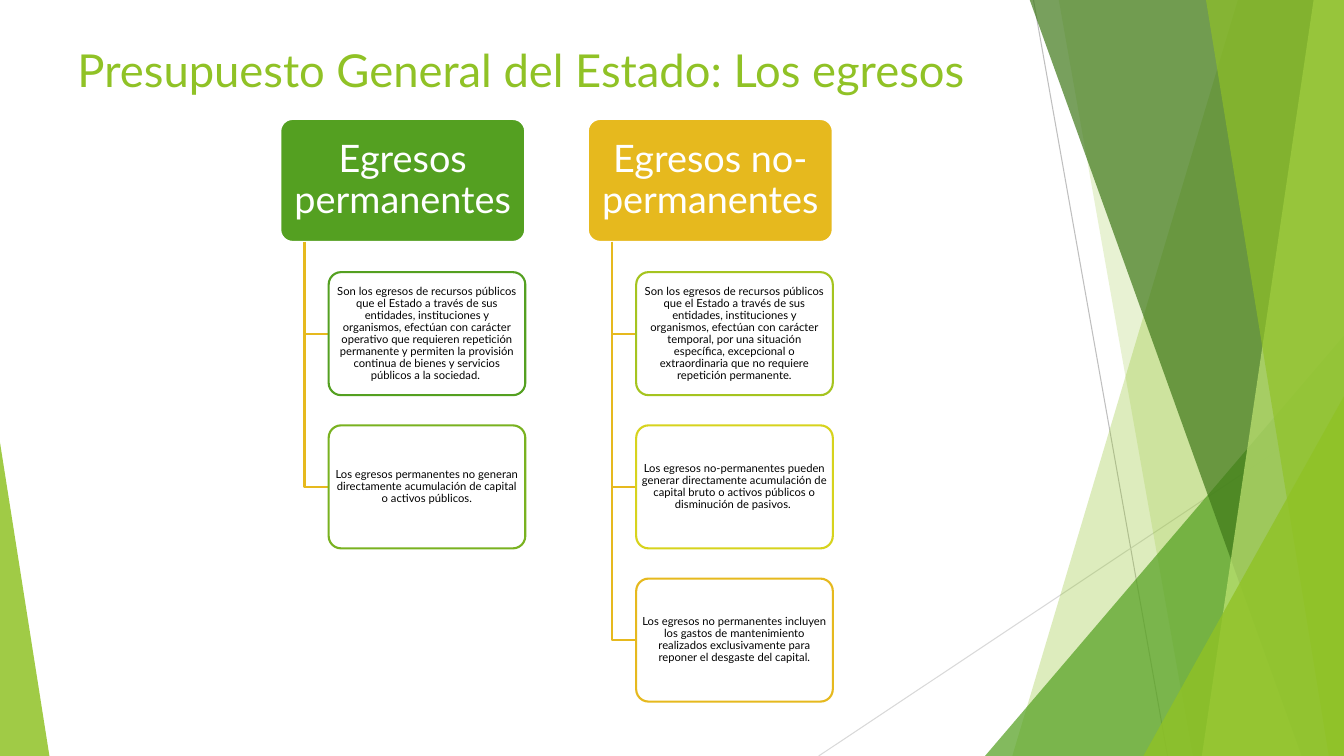
"""Build the slide on permanent and non-permanent state expenditure."""
from lxml.etree import SubElement
from pptx import Presentation
from pptx.dml.color import RGBColor
from pptx.enum.shapes import MSO_CONNECTOR, MSO_SHAPE
from pptx.enum.text import MSO_ANCHOR, PP_ALIGN
from pptx.oxml.ns import qn
from pptx.util import Inches, Pt

FONT = "Lato"
WHITE = RGBColor(0xFF, 0xFF, 0xFF)
BLACK = RGBColor(0x00, 0x00, 0x00)
LIME = RGBColor(0x90, 0xC2, 0x26)
PALE_LIME = RGBColor(0xC0, 0xE4, 0x74)
GREEN = RGBColor(0x54, 0xA0, 0x21)
DARK_GREEN = RGBColor(0x3F, 0x78, 0x19)
LEAF = RGBColor(0x79, 0xB2, 0x20)
OLIVE = RGBColor(0xA5, 0xC4, 0x1F)
YELLOW = RGBColor(0xD7, 0xD3, 0x1D)
GOLD = RGBColor(0xE6, 0xB9, 0x1E)
GREY = RGBColor(0xBF, 0xBF, 0xBF)
LIGHT_GREY = RGBColor(0xD9, 0xD9, 0xD9)

WIDTH, HEIGHT = 13.33, 7.5
HEADER_TOP, HEADER_WIDTH, BOX_HEIGHT = 1.18, 2.43, 1.22
DETAIL_WIDTH, DETAIL_INDENT, TRUNK_INDENT = 1.95, 0.48, 0.24
ROW_PITCH = 1.52

COLUMNS = [
    (2.78, "Egresos permanentes", GREEN, [
        ("Son los egresos de recursos públicos que el Estado a través de sus "
         "entidades, instituciones y organismos, efectúan con carácter operativo "
         "que requieren repetición permanente y permiten la provisión continua "
         "de bienes y servicios públicos a la sociedad. ", GREEN),
        ("Los egresos permanentes no generan directamente acumulación de capital "
         "o activos públicos.", LEAF),
    ]),
    (5.83, "Egresos no-permanentes ", GOLD, [
        ("Son los egresos de recursos públicos que el Estado a través de sus "
         "entidades, instituciones y organismos, efectúan con carácter temporal, "
         "por una situación específica, excepcional o extraordinaria que no "
         "requiere repetición permanente.", OLIVE),
        ("Los egresos no-permanentes pueden generar directamente acumulación de "
         "capital bruto o activos públicos o disminución de pasivos. ", YELLOW),
        ("Los egresos no permanentes incluyen los gastos de mantenimiento "
         "realizados exclusivamente para reponer el desgaste del capital.", GOLD),
    ]),
]


def paint(shape, color, opacity=100):
    """Give a shape a solid fill of the given opacity and no shadow."""
    shape.shadow.inherit = False
    shape.fill.solid()
    shape.fill.fore_color.rgb = color
    if opacity < 100:
        node = next(shape._element.spPr.iter(qn("a:srgbClr")))
        SubElement(node, qn("a:alpha")).set("val", str(opacity * 1000))


def outline(shape, color, width=1.5):
    """Set the colour and width of a line."""
    shape.line.color.rgb = color
    shape.line.width = Pt(width)


def add_path(page, points, closed):
    """Draw a freeform through points given in inches."""
    start, *others = [(Inches(x), Inches(y)) for x, y in points]
    builder = page.shapes.build_freeform(*start)
    builder.add_line_segments(others, close=closed)
    return builder.convert_to_shape()


def add_facet(page, top_left, top_right, bottom_left, color, opacity):
    """Draw a translucent facet reaching the right edge of the slide."""
    points = [(top_left, -0.01), (top_right, -0.01), (WIDTH, HEIGHT), (bottom_left, HEIGHT)]
    if top_right < WIDTH:
        points.insert(2, (WIDTH, -0.01))
    facet = add_path(page, points, True)
    paint(facet, color, opacity)
    facet.line.fill.background()


def add_triangle(page, left, top, width, apex, color, opacity):
    """Draw a translucent triangle standing on the bottom edge."""
    triangle = page.shapes.add_shape(
        MSO_SHAPE.ISOSCELES_TRIANGLE, Inches(left), Inches(top),
        Inches(width), Inches(HEIGHT - top))
    triangle.adjustments[0] = apex
    paint(triangle, color, opacity)
    triangle.line.fill.background()


def add_hairline(page, start, end, color):
    """Draw a thin straight line."""
    line = page.shapes.add_connector(
        MSO_CONNECTOR.STRAIGHT, *[Inches(value) for value in (*start, *end)])
    outline(line, color, 0.75)
    SubElement(line._element.spPr, qn("a:effectLst"))


def add_background(page):
    """Draw the decoration from back to front."""
    add_hairline(page, (10.25, 0), (11.58, HEIGHT), GREY)
    add_hairline(page, (WIDTH, 4.03), (8.12, HEIGHT), LIGHT_GREY)
    add_facet(page, 12.28, WIDTH, 10.04, LIME, 30)
    add_facet(page, 10.5, WIDTH, 11.83, LIME, 20)
    add_triangle(page, 9.77, 3.33, 3.56, 1, GREEN, 72)
    add_facet(page, 10.21, WIDTH, 12.91, DARK_GREEN, 70)
    add_facet(page, 13.03, WIDTH, 11.92, PALE_LIME, 70)
    add_facet(page, 11.96, WIDTH, 13.18, LIME, 65)
    add_triangle(page, 11.34, 3.93, 1.99, 1, LIME, 80)
    add_triangle(page, 0, 4.39, 0.49, 0, LIME, 85)


def write(para, text, size, color):
    """Add one run to a paragraph."""
    span = para.add_run()
    span.text = text
    span.font.name = FONT
    span.font.size = Pt(size)
    span.font.color.rgb = color


def add_title(page, text):
    """Add the slide title."""
    box = page.shapes.add_textbox(Inches(0.67), Inches(0.37), Inches(9.85), Inches(1.18))
    box.text_frame.word_wrap = True
    write(box.text_frame.paragraphs[0], text, 32.4, LIME)


def add_box(page, left, top, width, text, size, color, inset):
    """Add a rounded box with centred text."""
    box = page.shapes.add_shape(
        MSO_SHAPE.ROUNDED_RECTANGLE, Inches(left), Inches(top),
        Inches(width), Inches(BOX_HEIGHT))
    box.adjustments[0] = 0.1
    frame = box.text_frame
    frame.word_wrap = True
    frame.vertical_anchor = MSO_ANCHOR.MIDDLE
    frame.margin_left = frame.margin_right = Inches(inset)
    frame.margin_top = frame.margin_bottom = Inches(0.01)
    para = frame.paragraphs[0]
    para.alignment = PP_ALIGN.CENTER
    para.line_spacing = 0.9
    write(para, text, size, color)
    return box


def add_column(page, left, heading, color, details):
    """Add a heading with its branch of detail boxes."""
    header = add_box(page, left, HEADER_TOP, HEADER_WIDTH, heading, 27, WHITE, 0.06)
    paint(header, color)
    outline(header, WHITE)
    trunk, detail_left = left + TRUNK_INDENT, left + DETAIL_INDENT
    for row, (text, border) in enumerate(details, 1):
        top = HEADER_TOP + row * ROW_PITCH
        middle = top + BOX_HEIGHT / 2
        branch = add_path(page, [(trunk, HEADER_TOP + BOX_HEIGHT), (trunk, middle),
                                 (detail_left, middle)], False)
        branch.shadow.inherit = False
        branch.fill.background()
        outline(branch, GOLD)
        box = add_box(page, detail_left, top, DETAIL_WIDTH, text, 8, BLACK, 0.02)
        paint(box, WHITE, 90)
        outline(box, border)


def main():
    """Create and save the deck."""
    deck = Presentation()
    deck.slide_width, deck.slide_height = Inches(WIDTH), Inches(HEIGHT)
    page = deck.slides.add_slide(deck.slide_layouts[6])
    add_background(page)
    add_title(page, "Presupuesto General del Estado: Los egresos")
    for column in COLUMNS:
        add_column(page, *column)
    deck.save("out.pptx")


if __name__ == "__main__":
    main()
